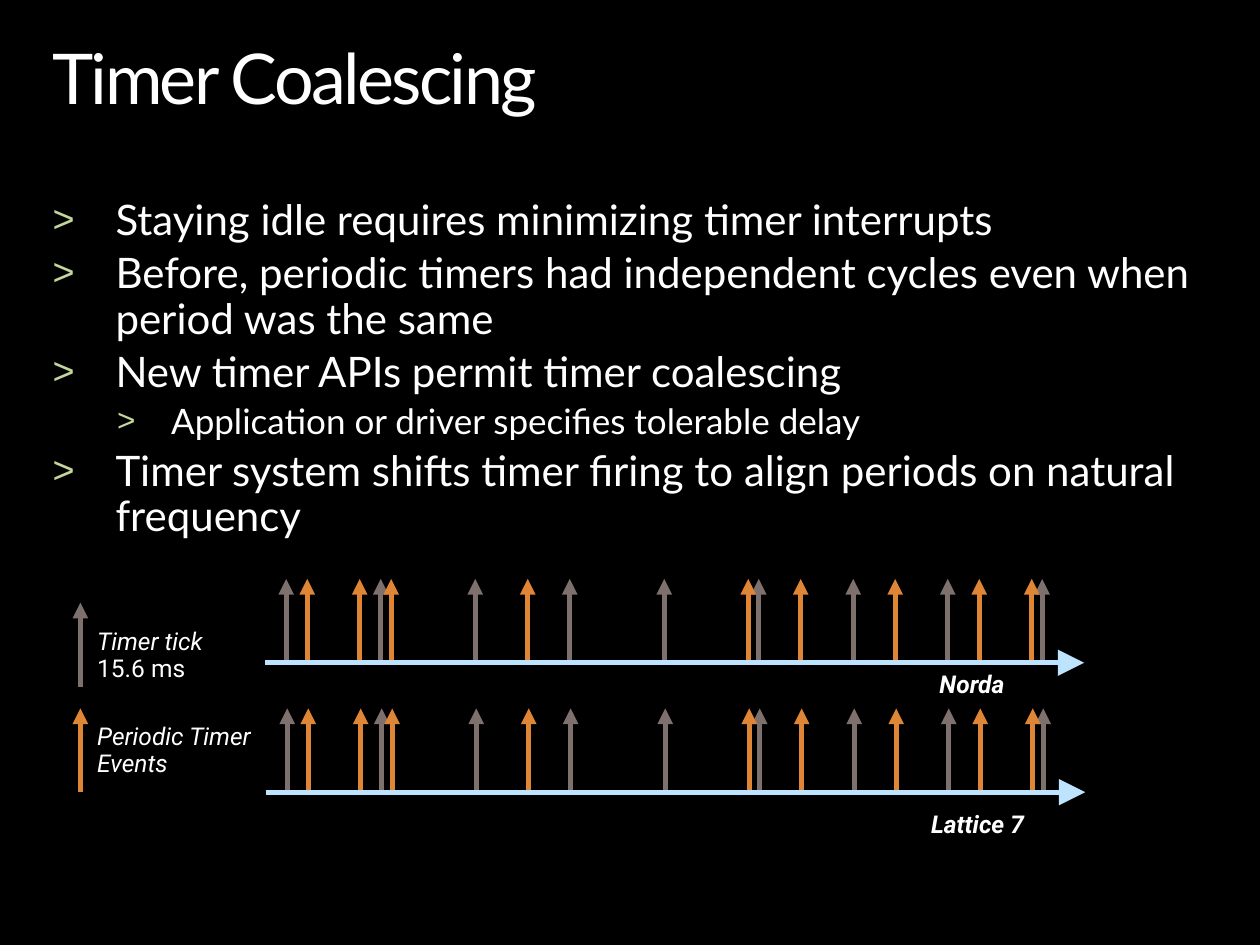
from dataclasses import dataclass

import pptx
import pptx.dml.color
import pptx.enum.shapes
import pptx.oxml.ns
import pptx.util
from lxml import etree

Cm = pptx.util.Cm
Pt = pptx.util.Pt
qn = pptx.oxml.ns.qn


@dataclass(frozen=True)
class Theme:
    background: str = "000000"
    text: str = "FFFFFF"
    bullet: str = "C3D69B"
    tick: str = "7D706D"
    event: str = "DF8536"
    axis: str = "BDE3FF"
    heading_font: str = "Lato"
    label_font: str = "Roboto"
    title_size: int = 40
    point_sizes: tuple = (24, 20)
    label_size: int = 14
    line_width: int = 3


THEME = Theme()

# Timeline geometry in cm; marks sit on a grid of 72 steps across the ticks
STEP = 15.24 / 72
TICK_STEPS = range(0, 73, 9)
EVENT_STEPS = (2, 7, 10, 23, 44, 49, 58, 66, 71)
AXIS_STEPS = (-2, 76)
ARROW_HEIGHT = 1.69

# Bullet text with its level
POINTS = (
    ("Staying idle requires minimizing timer interrupts", 0),
    ("Before, periodic timers had independent cycles even when period was the same", 0),
    ("New timer APIs permit timer coalescing", 0),
    ("Application or driver specifies tolerable delay", 1),
    ("Timer system shifts timer firing to align periods on natural frequency", 0),
)
# Text start and hanging indent per level, in cm
INDENTS = ((1.27, -1.27), (2.39, -1.09))


def rgb(color):
    return pptx.dml.color.RGBColor.from_string(color)


def add_text_frame(slide, left, top, width, height, inset=True):
    frame = slide.shapes.add_textbox(Cm(left), Cm(top), Cm(width), Cm(height)).text_frame
    frame.word_wrap = True
    if not inset:
        frame.margin_left = frame.margin_right = 0
        frame.margin_top = frame.margin_bottom = 0
    return frame


def write(frame, text, *, font, size, bold=False, italic=False,
          line_spacing=0.9, space_before=0, tracking=None):
    """Append a formatted paragraph, using the empty first one if it is free."""
    paragraph = frame.paragraphs[0]
    if paragraph.runs:
        paragraph = frame.add_paragraph()
        paragraph.space_before = Pt(space_before)
    paragraph.line_spacing = line_spacing
    run = paragraph.add_run()
    run.text = text
    run.font.name = font
    run.font.size = Pt(size)
    run.font.bold = bold
    run.font.italic = italic
    run.font.color.rgb = rgb(THEME.text)
    if tracking is not None:
        run.font._element.set("spc", str(int(tracking * 100)))
    return paragraph


def add_bullet(paragraph, level):
    paragraph.level = level
    properties = paragraph._p.get_or_add_pPr()
    start, hanging = INDENTS[level]
    properties.set("marL", str(Cm(start)))
    properties.set("indent", str(Cm(hanging)))
    color = etree.SubElement(properties, qn("a:buClr"))
    etree.SubElement(color, qn("a:srgbClr"), val=THEME.bullet)
    etree.SubElement(properties, qn("a:buSzPct"), val="90000")
    etree.SubElement(properties, qn("a:buFont"), typeface="Arial")
    etree.SubElement(properties, qn("a:buChar"), char=">")


def add_arrow(slide, start, end, color, head="med"):
    arrow = slide.shapes.add_connector(
        pptx.enum.shapes.MSO_CONNECTOR.STRAIGHT, *map(Cm, start + end))
    arrow.line.color.rgb = rgb(color)
    arrow.line.width = Pt(THEME.line_width)
    etree.SubElement(arrow.line._get_or_add_ln(), qn("a:tailEnd"),
                     type="triangle", w=head, len=head)
    etree.SubElement(arrow._element.spPr, qn("a:effectLst"))


def add_mark(slide, x, base, color):
    add_arrow(slide, (x, base), (x, base - ARROW_HEIGHT), color)


def add_timeline(slide, origin, base):
    for steps, color in ((TICK_STEPS, THEME.tick), (EVENT_STEPS, THEME.event)):
        for step in steps:
            add_mark(slide, origin + step * STEP, base, color)
    axis_start, axis_end = ((origin + step * STEP, base) for step in AXIS_STEPS)
    add_arrow(slide, axis_start, axis_end, THEME.axis, head="lg")


def add_legend_entry(slide, base, text_top, color, lines):
    add_mark(slide, 1.62, base, color)
    label = add_text_frame(slide, 1.71, text_top, 3.63, 1.35)
    for text, italic in lines:
        write(label, text, font=THEME.label_font, size=THEME.label_size, italic=italic)


def main():
    deck = pptx.Presentation()
    deck.slide_width, deck.slide_height = Cm(25.4), Cm(19.05)
    slide = deck.slides.add_slide(deck.slide_layouts[6])
    slide.background.fill.solid()
    slide.background.fill.fore_color.rgb = rgb(THEME.background)

    # Title
    title = add_text_frame(slide, 1.06, 0.89, 23.28, 1.55, inset=False)
    write(title, "Timer Coalescing", font=THEME.heading_font,
          size=THEME.title_size, tracking=-1.5)

    # Bullet points, each set apart by a fifth of its type size
    points = add_text_frame(slide, 1.06, 4.01, 23.28, 7.09, inset=False)
    for text, level in POINTS:
        size = THEME.point_sizes[level]
        point = write(points, text, font=THEME.heading_font, size=size,
                      space_before=size * 0.2)
        add_bullet(point, level)

    # Legend
    add_legend_entry(slide, 13.84, 12.57, THEME.tick,
                     (("Timer tick", True), ("15.6 ms", False)))
    add_legend_entry(slide, 15.97, 14.48, THEME.event,
                     (("Periodic Timer Events", True),))

    # Timelines of the older and the newer system
    for system, origin, base, label_left, label_top in (
        ("Norda", 5.77, 13.36, 18.69, 13.36),
        ("Lattice 7", 5.79, 15.97, 18.52, 16.18),
    ):
        add_timeline(slide, origin, base)
        label = add_text_frame(slide, label_left, label_top, 4.01, 0.86)
        write(label, system, font=THEME.label_font, size=THEME.label_size,
              bold=True, italic=True, line_spacing=1.0)

    deck.save("out.pptx")


if __name__ == "__main__":
    main()
